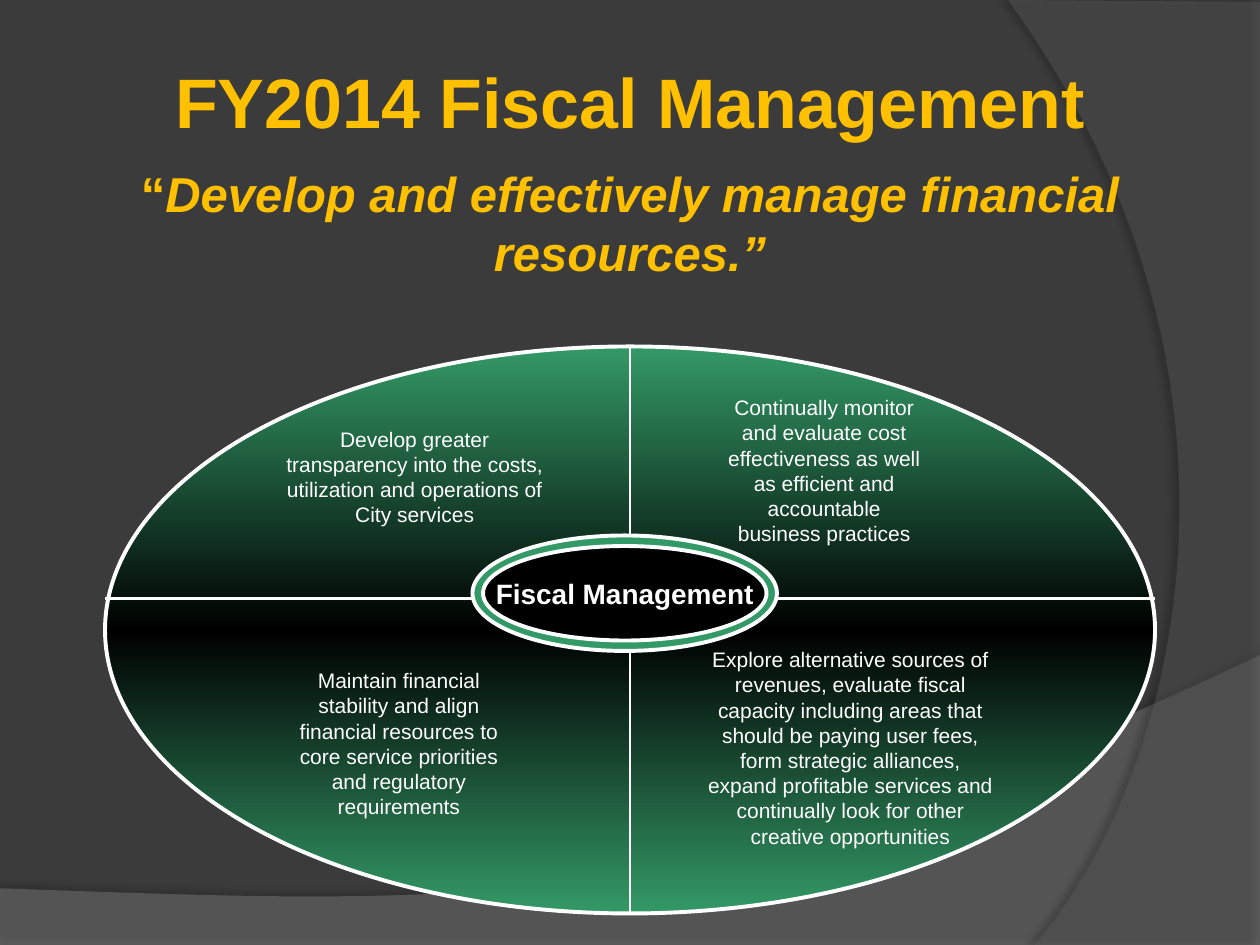
"""Build the fiscal management slide: four goals in an ellipse around a central hub."""
import copy

import lxml.etree
import pptx
import pptx.dml.color
import pptx.enum.shapes
import pptx.enum.text
import pptx.oxml.ns
import pptx.util

COLUMNS, ROWS = 120, 90
FONT = "Arial"
LEADING = 1.2
COLORS = {
    "background": "3B3B3B", "wave": "7F7F7F", "arc": "5E5E5E", "shadow": "000000",
    "green": "339966", "black": "000000", "white": "FFFFFF", "gold": "FFC000",
}
TITLE = "FY2014 Fiscal Management"
QUOTE_MARK, QUOTE = "“", "Develop and effectively manage financial resources.”"
HUB_LABEL = "Fiscal Management"
GOALS = [
    ((26, 63, 24), 6, "Maintain financial stability and align financial resources to core "
     "service priorities and regulatory requirements"),
    ((66, 61, 30), 8, "Explore alternative sources of revenues, evaluate fiscal capacity "
     "including areas that should be paying user fees, form strategic alliances, expand "
     "profitable services and continually look for other creative opportunities"),
    ((26, 40, 27), 4, "Develop greater transparency into the costs, utilization and "
     "operations of City services"),
    ((68, 37, 21), 6, "Continually monitor and evaluate cost effectiveness as well as "
     "efficient and accountable business practices"),
]
ELLIPSES = [((10, 33, 100, 54), None), ((45, 51, 29, 11), "green"), ((46, 52, 27, 9), "black")]
SPOKES = [((60, 51), (60, 33)), ((45, 57), (10, 57)), ((60, 62), (60, 87)), ((74, 57), (110, 57))]
BACKDROPS = [
    {"color": "wave", "alpha": 45, "shadow": (35, 4, 3.5, 270),
     "curve": [(120, 62.4), (67.1, 87.5), (46.9, 86.3), (0, 84.6)],
     "corners": [(0, 90), (120, 90)]},
    {"color": "arc", "alpha": 40, "shadow": (45, 4, 4, 180),
     "curve": [(98.5, 90), (112.2, 74.3), (122.2, 36), (96, 0)],
     "corners": [(120, 0.2), (120, 90)]},
]

deck = pptx.Presentation()
deck.slide_width, deck.slide_height = pptx.util.Inches(10), pptx.util.Inches(7.5)
page = deck.slides.add_slide(deck.slide_layouts[6])


def rgb(name):
    return pptx.dml.color.RGBColor.from_string(COLORS[name])


def grid(*cells):
    """Turn alternating column and row counts into lengths."""
    units = (deck.slide_width / COLUMNS, deck.slide_height / ROWS)
    return [round(cell * units[index % 2]) for index, cell in enumerate(cells)]


def add_xml(parent, tag, **attributes):
    return lxml.etree.SubElement(parent, pptx.oxml.ns.qn(tag), attributes)


def curve_points(controls, steps=48):
    points = []
    for step in range(steps + 1):
        t = step / steps
        weights = ((1 - t) ** 3, 3 * t * (1 - t) ** 2, 3 * t * t * (1 - t), t ** 3)
        points.append(grid(*(sum(w * point[axis] for w, point in zip(weights, controls))
                             for axis in (0, 1))))
    return points


def add_backdrop(color, alpha, shadow, curve, corners):
    start, *others = curve_points(curve) + [grid(*corner) for corner in corners]
    builder = page.shapes.build_freeform(*start, scale=1.0)
    builder.add_line_segments(others, close=True)
    shape = builder.convert_to_shape()
    shape.fill.solid()
    shape.fill.fore_color.rgb = rgb(color)
    shape.line.fill.background()
    properties = shape._element.spPr
    add_xml(properties.find(".//" + pptx.oxml.ns.qn("a:srgbClr")), "a:alpha", val=str(alpha * 1000))
    opacity, blur, distance, angle = shadow
    outer = add_xml(add_xml(properties, "a:effectLst"), "a:outerShdw",
                    blurRad=str(pptx.util.Pt(blur)), dist=str(pptx.util.Pt(distance)),
                    dir=str(angle * 60000), algn="ctr", rotWithShape="0")
    tint = add_xml(outer, "a:srgbClr", val=COLORS["shadow"])
    add_xml(tint, "a:alpha", val=str(opacity * 1000))


def fill_gradient(shape):
    shape.fill.gradient()
    shape.fill.gradient_angle = 90
    for stop in shape.fill.gradient_stops:
        stop.color.rgb = rgb("green")
    stops = shape._element.spPr.find(".//" + pptx.oxml.ns.qn("a:gsLst"))
    stops.insert(1, copy.deepcopy(stops[0]))
    middle = shape.fill.gradient_stops[1]
    middle.position = 0.5
    middle.color.rgb = rgb("black")


def add_ellipse(cells, color):
    shape = page.shapes.add_shape(pptx.enum.shapes.MSO_SHAPE.OVAL, *grid(*cells))
    shape.shadow.inherit = False
    if color:
        shape.fill.solid()
        shape.fill.fore_color.rgb = rgb(color)
    else:
        fill_gradient(shape)
    shape.line.color.rgb = rgb("white")
    shape.line.width = pptx.util.Pt(2.25)
    return shape


def add_spoke(start, end):
    line = page.shapes.add_connector(pptx.enum.shapes.MSO_CONNECTOR.STRAIGHT,
                                     *grid(*start), *grid(*end))
    line.line.color.rgb = rgb("white")
    line.line.width = pptx.util.Pt(1.25)
    add_xml(line._element.spPr, "a:effectLst")


def format_paragraph(para, size, color, bold=False):
    para.alignment = pptx.enum.text.PP_ALIGN.CENTER
    para.line_spacing = pptx.util.Pt(size * LEADING)
    for span in para.runs:
        span.font.name = FONT
        span.font.size = pptx.util.Pt(size)
        span.font.bold = bold
        span.font.color.rgb = rgb(color)


def add_text(left, top, width, height):
    box = page.shapes.add_textbox(*grid(left, top, width, height))
    box.text_frame.word_wrap = True
    return box.text_frame


page.background.fill.solid()
page.background.fill.fore_color.rgb = rgb("background")
for backdrop in BACKDROPS:
    add_backdrop(**backdrop)

for cells, color in ELLIPSES:
    hub = add_ellipse(cells, color)
hub.text_frame.text = HUB_LABEL
hub.text_frame.word_wrap = False
hub.text_frame.vertical_anchor = pptx.enum.text.MSO_ANCHOR.MIDDLE
format_paragraph(hub.text_frame.paragraphs[0], 16, "white", bold=True)

for cells, lines, goal in GOALS:
    frame = add_text(*cells, 1.2 + lines * 12 * LEADING / 6)
    frame.text = goal
    format_paragraph(frame.paragraphs[0], 12, "white")

for start, end in SPOKES:
    add_spoke(start, end)

heading = add_text(0, 5, COLUMNS, 22.7)
heading.text = TITLE
format_paragraph(heading.paragraphs[0], 40, "gold", bold=True)
quote = heading.add_paragraph()
quote.space_before = pptx.util.Pt(12)
for words, italic in ((QUOTE_MARK, False), (QUOTE, True)):
    span = quote.add_run()
    span.text = words
    span.font.italic = italic
format_paragraph(quote, 28, "gold", bold=True)

deck.save("out.pptx")
